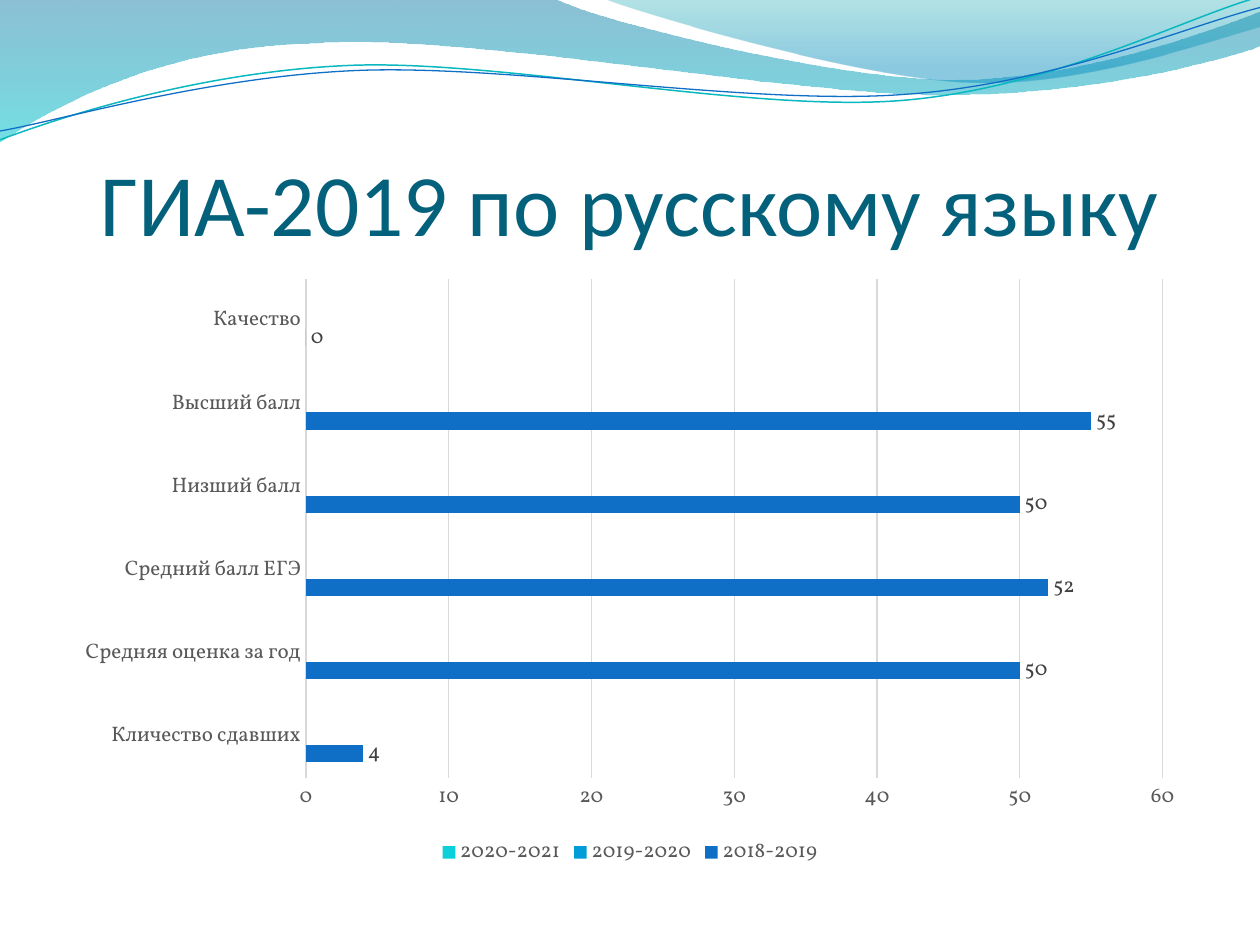
from pptx import Presentation
from pptx.chart.data import CategoryChartData
from pptx.dml.color import RGBColor
from pptx.enum.chart import XL_CHART_TYPE, XL_LABEL_POSITION, XL_LEGEND_POSITION, XL_TICK_MARK
from pptx.enum.text import MSO_ANCHOR, MSO_AUTO_SIZE, PP_ALIGN
from pptx.oxml.ns import qn
from pptx.oxml.xmlchemy import OxmlElement
from pptx.util import Inches, Pt

BAR_CLUSTERED = XL_CHART_TYPE.BAR_CLUSTERED
OUTSIDE_END = XL_LABEL_POSITION.OUTSIDE_END
LEGEND_BOTTOM = XL_LEGEND_POSITION.BOTTOM
NO_TICK = XL_TICK_MARK.NONE
BOTTOM = MSO_ANCHOR.BOTTOM
NO_AUTOFIT = MSO_AUTO_SIZE.NONE
CENTER = PP_ALIGN.CENTER

DEEP_TEAL = RGBColor(0x04, 0x61, 0x7B)
BLUE = RGBColor(0x0F, 0x6F, 0xC6)
SKY = RGBColor(0x00, 0x9D, 0xD9)
CYAN = RGBColor(0x0B, 0xD0, 0xD9)
LINE_TEAL = RGBColor(0x0A, 0xB8, 0xBF)
WAVE_BLUE = RGBColor(0x00, 0x74, 0xA1)
WAVE_CYAN = RGBColor(0x00, 0xC6, 0xCF)
CREST_TEAL = RGBColor(0x00, 0xA1, 0xA9)
CREST_BLUE = RGBColor(0x00, 0x8B, 0xBF)
GRID_GREY = RGBColor(0xD9, 0xD9, 0xD9)
AXIS_GREY = RGBColor(0x59, 0x59, 0x59)
LABEL_GREY = RGBColor(0x40, 0x40, 0x40)
BLACK = RGBColor(0, 0, 0)

LARGE_WAVE = [(0, 0), (4.4, -0.01), (4.76, 0.17, 6.64, 0.63, 7.58, 0.63),
              (8.53, 0.63, 9.58, 0.26, 10, 0.09), (10.01, 0.36),
              (9.83, 0.44, 8.7, 0.76, 7.46, 0.75), (6.22, 0.75, 3.82, 0.28, 2.57, 0.34),
              (1.29, 0.36, 0.46, 0.83, -0.01, 1.13)]
CREST = [(4.79, -0.01), (5.09, 0.11, 6.82, 0.62, 7.69, 0.65),
         (8.56, 0.69, 9.61, 0.32, 10, 0.21), (10, 0)]
TEAL_STRAND = [(0, 1.11), (0.48, 0.93, 1.58, 0.57, 2.77, 0.52),
               (3.95, 0.47, 5.93, 0.89, 7.13, 0.8), (8.33, 0.71, 9.38, 0.15, 9.98, -0.02)]
BLUE_STRAND = [(0, 1.04), (0.47, 0.96, 1.64, 0.61, 2.83, 0.56),
               (4.03, 0.51, 5.97, 0.84, 7.17, 0.75), (8.36, 0.67, 9.41, 0.21, 10, 0.06)]

CATEGORIES = ["Кличество сдавших", "Средняя оценка за год", "Средний балл ЕГЭ",
              "Низший балл", "Высший балл", "Качество"]
SERIES = [("2018-2019", [4, 50, 52, 50, 55, 0], BLUE),
          ("2019-2020", [None] * len(CATEGORIES), SKY),
          ("2020-2021", [None] * len(CATEGORIES), CYAN)]


class SlideBuilder:
    """Holds the text style and the current slide, and adds each kind of element."""

    heading_font = "Calibri"
    chart_font = "Vollkorn"

    def __init__(self, deck):
        self.page = deck.slides.add_slide(deck.slide_layouts[5])

    def apply(self, target, values):
        for name, value in values.items():
            setattr(target, name, value)

    def style(self, font, size, color, name):
        self.apply(font, {"size": Pt(size), "name": name, "bold": False})
        font.color.rgb = color

    def outline(self, parts, close):
        anchors = [(Inches(part[-2]), Inches(part[-1])) for part in parts]
        builder = self.page.shapes.build_freeform(*anchors[0])
        builder.add_line_segments(anchors[1:], close=close)
        shape = builder.convert_to_shape()
        shape.shadow.inherit = False
        segments = list(shape.element.spPr.iter(qn("a:lnTo")))
        for segment, part in zip(segments, parts[1:]):
            if len(part) == 6:
                self.bend(shape, segment, part)
        return shape

    def bend(self, shape, segment, part):
        curve = OxmlElement("a:cubicBezTo")
        for x, y in zip(part[::2], part[1::2]):
            point = OxmlElement("a:pt")
            point.set("x", str(Inches(x) - shape.left))
            point.set("y", str(Inches(y) - shape.top))
            curve.append(point)
        segment.getparent().replace(segment, curve)

    def wave(self, parts, stops):
        shape = self.outline(parts, True)
        shape.fill.gradient()
        shape.fill.gradient_angle = 270
        for stop, (position, color, _) in zip(shape.fill.gradient_stops, stops):
            stop.position = position
            stop.color.rgb = color
        colors = shape.element.spPr.iter(qn("a:srgbClr"))
        for color, (_, _, opacity) in zip(colors, stops):
            alpha = OxmlElement("a:alpha")
            alpha.set("val", str(opacity * 1000))
            color.append(alpha)
        shape.line.fill.background()

    def strand(self, parts, color, width):
        shape = self.outline(parts, False)
        shape.fill.background()
        shape.line.color.rgb = color
        shape.line.width = Pt(width)

    def title(self, text, left, top, width, height):
        box = self.page.shapes.title
        self.page.shapes.element.append(box.element)
        self.apply(box, {"left": Inches(left), "top": Inches(top),
                         "width": Inches(width), "height": Inches(height)})
        frame = box.text_frame
        self.apply(frame, {"margin_left": 0, "margin_top": Inches(0.05), "margin_right": 0,
                           "margin_bottom": 0, "vertical_anchor": BOTTOM,
                           "word_wrap": True, "auto_size": NO_AUTOFIT})
        para = frame.paragraphs[0]
        para.alignment = CENTER
        span = para.add_run()
        span.text = text
        self.style(span.font, 50, DEEP_TEAL, self.heading_font)

    def bar_chart(self, categories, series, left, top, width, height):
        data = CategoryChartData()
        data.categories = categories
        for name, values, _ in series:
            data.add_series(name, values)
        chart = self.page.shapes.add_chart(BAR_CLUSTERED, Inches(left), Inches(top),
                                           Inches(width), Inches(height), data).chart
        self.apply(chart, {"has_title": False, "has_legend": True})
        self.style(chart.font, 10, BLACK, self.chart_font)
        self.apply(chart.legend, {"position": LEGEND_BOTTOM, "include_in_layout": False})
        self.style(chart.legend.font, 12, AXIS_GREY, self.chart_font)

        for axis in (chart.category_axis, chart.value_axis):
            self.apply(axis, {"major_tick_mark": NO_TICK, "minor_tick_mark": NO_TICK})
            self.style(axis.tick_labels.font, 12, AXIS_GREY, self.chart_font)
        self.apply(chart.value_axis, {"minimum_scale": 0, "maximum_scale": 60, "major_unit": 10,
                                      "has_major_gridlines": True})
        chart.value_axis.format.line.fill.background()
        for line in (chart.category_axis.format.line, chart.value_axis.major_gridlines.format.line):
            line.color.rgb = GRID_GREY
            line.width = Pt(0.75)

        plot = chart.plots[0]
        self.apply(plot, {"gap_width": 182, "overlap": 0, "vary_by_categories": False})
        for bars, (_, _, color) in zip(plot.series, series):
            bars.format.fill.solid()
            bars.format.fill.fore_color.rgb = color
        labels = plot.series[0].data_labels
        self.apply(labels, {"show_value": True, "position": OUTSIDE_END})
        self.style(labels.font, 12, LABEL_GREY, self.chart_font)


def main():
    deck = Presentation()
    deck.slide_width, deck.slide_height = Inches(10), Inches(7.5)
    slide = SlideBuilder(deck)
    slide.wave(LARGE_WAVE, [(0, WAVE_BLUE, 45), (1, WAVE_CYAN, 55)])
    slide.wave(CREST, [(0, CREST_TEAL, 30), (0.8, CREST_BLUE, 45)])
    slide.strand(TEAL_STRAND, LINE_TEAL, 0.85)
    slide.strand(BLUE_STRAND, BLUE, 0.75)
    slide.title("ГИА-2019 по русскому языку", 0.5, 0.77, 9, 1.25)
    slide.bar_chart(CATEGORIES, SERIES, 0.5, 2.12, 9, 4.8)
    deck.save("out.pptx")


if __name__ == "__main__":
    main()
